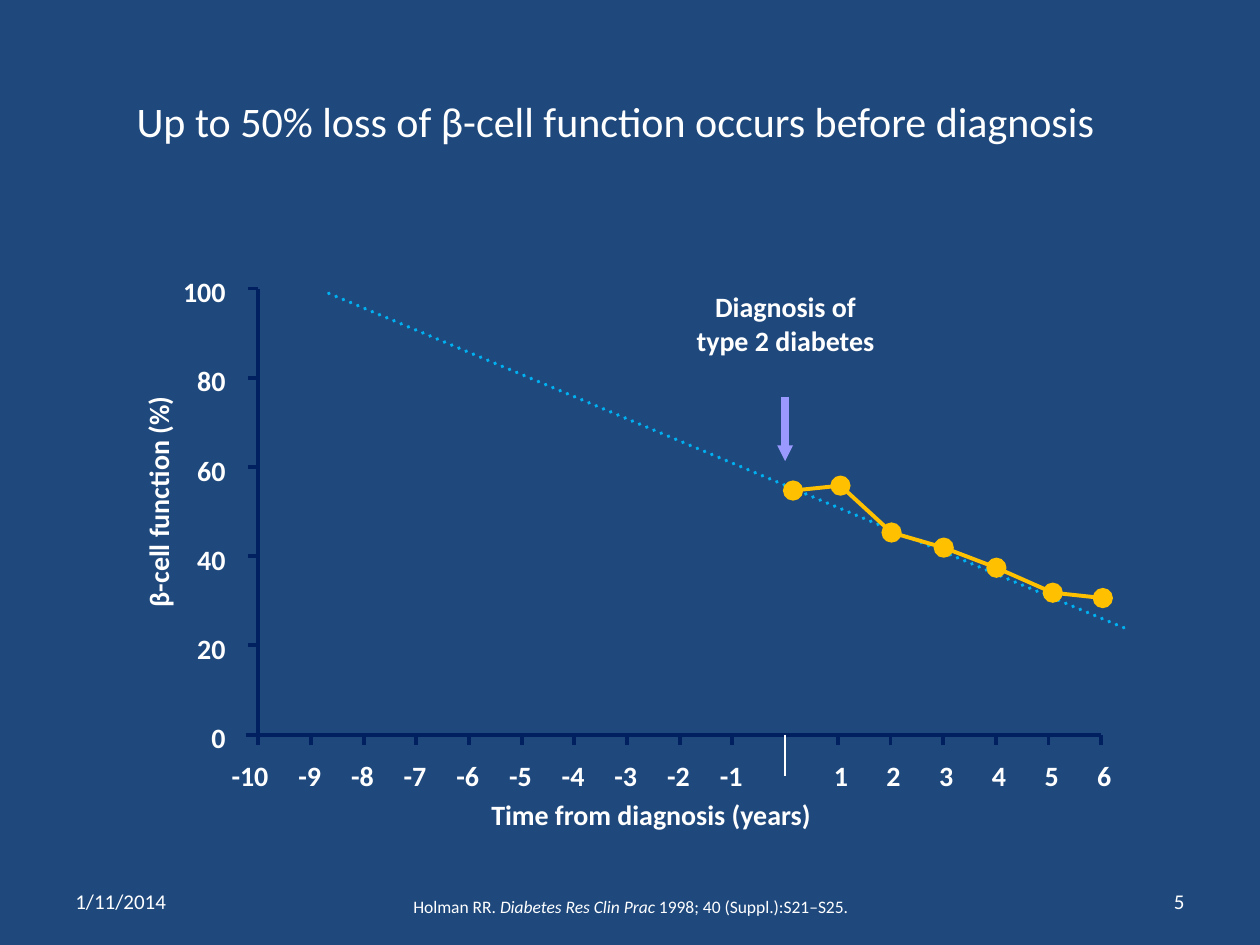
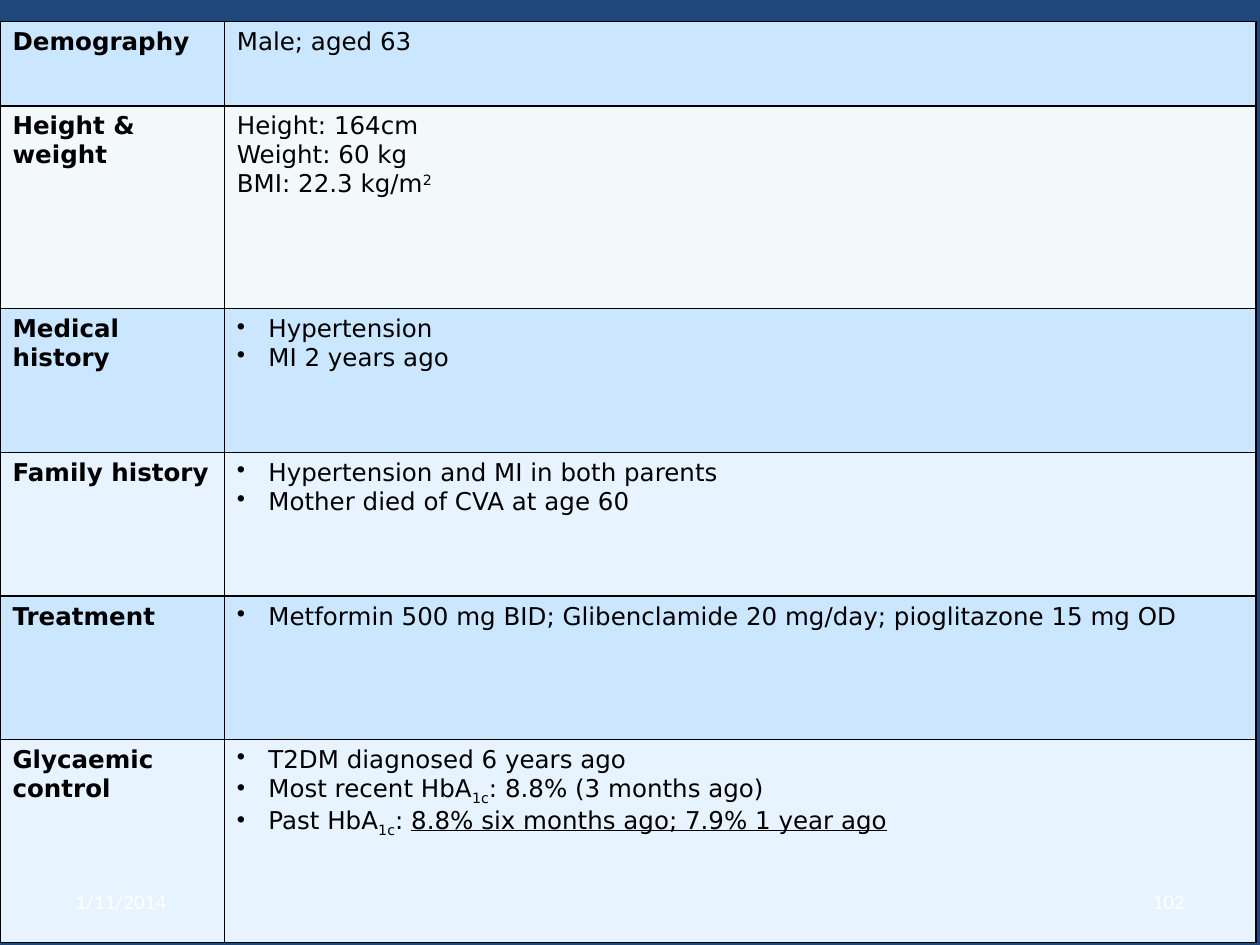
from dataclasses import dataclass
from itertools import pairwise

from lxml import etree
from pptx import Presentation
from pptx import util as u
from pptx.dml.color import RGBColor
from pptx.enum import dml, shapes, text
from pptx.oxml import ns

Inches, Pt = u.Inches, u.Pt


@dataclass(frozen=True)
class Theme:
    navy: str = "1F497D"
    axis: str = "002060"
    white: str = "FFFFFF"
    black: str = "000000"
    gold: str = "FFC000"
    cyan: str = "00B0F0"
    lilac: str = "9999FF"
    font: str = "Calibri"
    table_font: str = "DejaVu Sans"
    title_size: int = 24
    label_size: int = 16
    table_size: int = 14
    footer_size: int = 12
    source_size: int = 10


THEME = Theme()
ALIGN = text.PP_ALIGN

# Content: a text line is a list of (wording, style) pieces
DATE = "1/11/2014"
TITLE = "Up to 50% loss of β-cell function occurs before diagnosis"
X_TITLE = "Time from diagnosis (years)"
Y_TITLE = "β-cell function (%)"
DIAGNOSIS = "Diagnosis of type 2 diabetes"
CITATION = [("Holman RR. ", ""), ("Diabetes Res Clin Prac", "italic"),
            (" 1998; 40 (Suppl.):S21–S25.", "")]
MEASURED = [(0.15, 54.7), (1.05, 55.8), (2.02, 45.3), (3.01, 41.9),
            (4.01, 37.4), (5.08, 31.8), (6.03, 30.6)]
TREND = [(-8.66, 98.9), (6.48, 23.7)]

# Case table: heading, fill, row height, bulleted, lines
CASE = [
    ("Demography", "CBE6FF", 0.67, False, [[("Male; aged 63", "")]]),
    ("Height & weight", "F3F9FA", 1.61, False,
     [[("Height: 164cm", "")], [("Weight: 60 kg", "")],
      [("BMI: 22.3 kg/m", ""), ("2", "super")]]),
    ("Medical history", "CBE6FF", 1.14, True,
     [[("Hypertension", "")], [("MI 2 years ago", "")]]),
    ("Family history", "E7F3FF", 1.14, True,
     [[("Hypertension and MI in both parents", "")],
      [("Mother died of CVA at age 60", "")]]),
    ("Treatment", "CBE6FF", 1.14, True,
     [[("Metformin 500 mg BID; Glibenclamide 20 mg/day; "
        "pioglitazone 15 mg OD", "")]]),
    ("Glycaemic control", "E7F3FF", 1.61, True,
     [[("T2DM diagnosed 6 years ago", "")],
      [("Most recent HbA", ""), ("1c", "sub"),
       (": 8.8% (3 months ago)", "")],
      [("Past HbA", ""), ("1c", "sub"), (": ", ""),
       ("8.8% six months ago; 7.9% 1 year ago", "underline")]]),
]
COLUMNS = (1.78, 8.19)

# Plot scale
LEFT, RIGHT, TOP, BOTTOM = 2.05, 8.74, 2.29, 5.83
FIRST_YEAR, LAST_YEAR = -10, 6
TICK = 0.08
MARKER = 0.15
LABEL_WIDTH = 0.6


def x_at(year):
    return LEFT + (year - FIRST_YEAR) * (RIGHT - LEFT) / (LAST_YEAR - FIRST_YEAR)


def y_at(percent):
    return BOTTOM - percent * (BOTTOM - TOP) / 100


def spot(point):
    return x_at(point[0]), y_at(point[1])


# Shared helpers
def color(code):
    return RGBColor.from_string(code)


def style_text(frame, size, ink=THEME.white, bold=False, align=ALIGN.LEFT,
               font=THEME.font):
    for para in frame.paragraphs:
        para.alignment = align
        for span in para.runs:
            span.font.name = font
            span.font.size = Pt(size)
            span.font.bold = bold
            span.font.color.rgb = color(ink)


def add_pieces(para, pieces):
    for wording, style in pieces:
        span = para.add_run()
        span.text = wording
        if style == "italic":
            span.font.italic = True
        elif style == "underline":
            span.font.underline = True
        elif style:
            shift = {"super": "30000", "sub": "-25000"}[style]
            span.font._element.set("baseline", shift)


def add_label(page, at, wording, size=THEME.label_size, bold=True,
              align=ALIGN.LEFT, wrap=False, inset=0.0,
              anchor=text.MSO_ANCHOR.TOP):
    box = page.shapes.add_textbox(*map(Inches, at))
    frame = box.text_frame
    frame.word_wrap = wrap
    frame.vertical_anchor = anchor
    frame.margin_left = frame.margin_right = Inches(inset)
    frame.margin_top = frame.margin_bottom = Inches(inset / 2)
    if isinstance(wording, str):
        frame.text = wording
    else:
        add_pieces(frame.paragraphs[0], wording)
    style_text(frame, size, bold=bold, align=align)
    return box


def add_line(page, start, end, ink=THEME.axis, width=2.25):
    line = page.shapes.add_connector(shapes.MSO_CONNECTOR.STRAIGHT,
                                     *map(Inches, (*start, *end)))
    line.line.color.rgb = color(ink)
    line.line.width = Pt(width)
    etree.SubElement(line._element.spPr, ns.qn("a:effectLst"))
    return line


def add_footer(page, number):
    for left, wording, align in ((0.5, DATE, ALIGN.LEFT),
                                 (7.17, number, ALIGN.RIGHT)):
        add_label(page, (left, 6.95, 2.33, 0.4), wording, THEME.footer_size,
                  bold=False, align=align, wrap=True, inset=0.1,
                  anchor=text.MSO_ANCHOR.MIDDLE)


# Slide 1: decline of beta-cell function
def add_tick_label(page, right, top, value):
    add_label(page, (right - LABEL_WIDTH, top, LABEL_WIDTH, 0.27), str(value),
              align=ALIGN.RIGHT, wrap=True)


def draw_axes(page):
    add_line(page, (LEFT - 0.1, BOTTOM), (RIGHT, BOTTOM))
    add_line(page, (LEFT, BOTTOM + TICK), (LEFT, TOP))
    for percent in range(0, 101, 20):
        y = y_at(percent)
        add_line(page, (LEFT - TICK, y), (LEFT, y))
        add_tick_label(page, 1.79, y - 0.11, percent)
    for year in range(FIRST_YEAR, LAST_YEAR + 1):
        x = x_at(year)
        if year == 0:
            add_line(page, (x, BOTTOM), (x, 6.16), THEME.white, 1)
            continue
        add_line(page, (x, BOTTOM), (x, BOTTOM + TICK))
        add_tick_label(page, x + 0.08, 6.02, year)
    add_label(page, (3.9, 6.33, 2.57, 0.27), X_TITLE)
    add_label(page, (0.41, 3.84, 1.69, 0.27), Y_TITLE).rotation = 270


def draw_data(page):
    trend = add_line(page, *map(spot, TREND), ink=THEME.cyan)
    trend.line.dash_style = dml.MSO_LINE.ROUND_DOT
    trend.line._get_or_add_ln().set("cap", "rnd")
    centres = [spot(point) for point in MEASURED]
    for start, end in pairwise(centres):
        add_line(page, start, end, THEME.gold)
    for x, y in centres:
        marker = page.shapes.add_shape(
            shapes.MSO_SHAPE.FLOWCHART_CONNECTOR,
            Inches(x - MARKER / 2), Inches(y - MARKER / 2),
            Inches(MARKER), Inches(MARKER))
        marker.shadow.inherit = False
        marker.fill.solid()
        marker.fill.fore_color.rgb = color(THEME.gold)
        marker.line.color.rgb = color(THEME.gold)
        marker.line.width = Pt(0.75)


def build_decline(deck):
    page = deck.slides.add_slide(deck.slide_layouts[5])
    title = page.shapes.title
    title.left, title.top, title.width, title.height = map(
        Inches, (0.71, 0.52, 8.35, 0.88))
    title.text_frame.text = TITLE
    title.text_frame.vertical_anchor = text.MSO_ANCHOR.MIDDLE
    style_text(title.text_frame, THEME.title_size, align=ALIGN.CENTER)

    draw_axes(page)
    draw_data(page)

    # Diagnosis marker
    add_label(page, (5.35, 2.25, 1.77, 0.64), DIAGNOSIS, align=ALIGN.CENTER,
              wrap=True, inset=0.1)
    arrow = add_line(page, (x_at(0), 3.15), (x_at(0), 3.66), THEME.lilac, 4.5)
    etree.SubElement(arrow.line._get_or_add_ln(), ns.qn("a:tailEnd"),
                     type="triangle", w="sm", len="sm")

    add_label(page, (2.06, 6.65, 5.89, 0.68), CITATION, THEME.source_size,
              bold=False, align=ALIGN.CENTER, wrap=True, inset=0.1,
              anchor=text.MSO_ANCHOR.BOTTOM)
    add_footer(page, "5")


# Slide 2: case table
def add_borders(cell):
    properties = cell._tc.get_or_add_tcPr()
    for side in ("lnL", "lnR", "lnT", "lnB"):
        edge = etree.SubElement(properties, ns.qn(f"a:{side}"),
                                w=str(Pt(1)))
        fill = etree.SubElement(edge, ns.qn("a:solidFill"))
        etree.SubElement(fill, ns.qn("a:srgbClr"), val=THEME.black)


def add_bullet(para):
    properties = para._p.get_or_add_pPr()
    properties.set("marL", str(Inches(0.25)))
    properties.set("indent", str(-Inches(0.25)))
    etree.SubElement(properties, ns.qn("a:buChar"), char="•")


def fill_cell(cell, lines, shade, bold=False, bulleted=False):
    frame = cell.text_frame
    for index, pieces in enumerate(lines):
        para = frame.add_paragraph() if index else frame.paragraphs[0]
        add_pieces(para, pieces)
        if bulleted:
            add_bullet(para)
    style_text(frame, THEME.table_size, THEME.black, bold,
               font=THEME.table_font)
    add_borders(cell)
    cell.fill.solid()
    cell.fill.fore_color.rgb = color(shade)


def build_case(deck):
    page = deck.slides.add_slide(deck.slide_layouts[6])
    table = page.shapes.add_table(len(CASE), len(COLUMNS), *map(
        Inches, (0, 0.17, sum(COLUMNS), 7.33))).table
    table.first_row = table.horz_banding = False
    for column, width in zip(table.columns, COLUMNS):
        column.width = Inches(width)
    for row, (heading, shade, height, bulleted, lines) in zip(table.rows, CASE):
        row.height = Inches(height)
        fill_cell(row.cells[0], [[(heading, "")]], shade, bold=True)
        fill_cell(row.cells[1], lines, shade, bulleted=bulleted)
    add_footer(page, "102")


def main():
    deck = Presentation()
    deck.slide_width, deck.slide_height = Inches(10), Inches(7.5)
    backdrop = deck.slide_master.background.fill
    backdrop.solid()
    backdrop.fore_color.rgb = color(THEME.navy)
    build_decline(deck)
    build_case(deck)
    deck.save("out.pptx")


if __name__ == "__main__":
    main()
